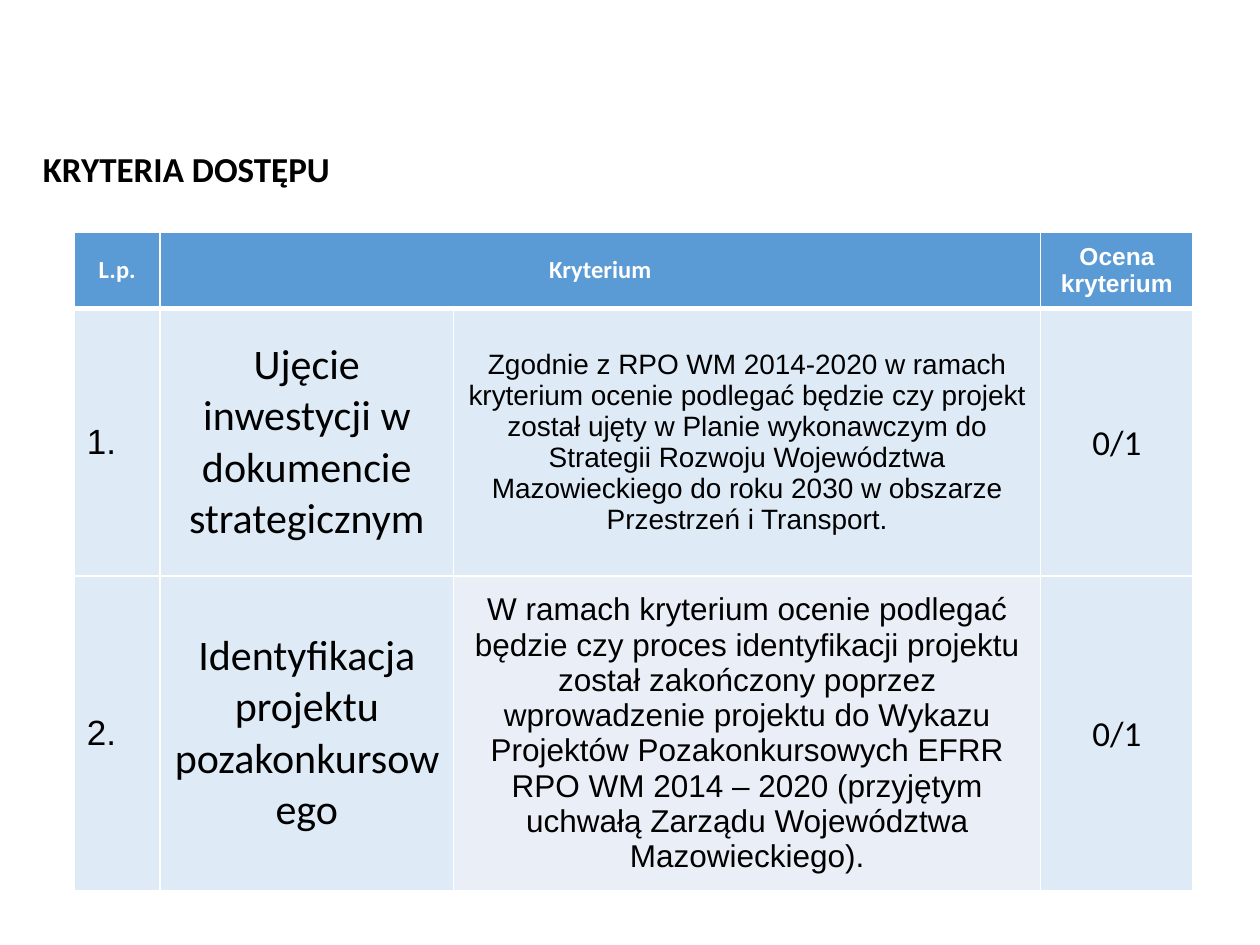
from lxml import etree
from pptx import Presentation
from pptx.dml.color import RGBColor
from pptx.enum.text import MSO_ANCHOR, MSO_AUTO_SIZE, PP_ALIGN
from pptx.oxml.ns import qn
from pptx.util import Inches, Pt

WHITE = RGBColor(0xFF, 0xFF, 0xFF)
BLACK = RGBColor(0, 0, 0)
HEADER_BLUE = RGBColor(0x5B, 0x9B, 0xD5)
ROW_BLUE = RGBColor(0xDE, 0xEB, 0xF7)
PALE_BLUE = RGBColor(0xEA, 0xEF, 0xF7)


def format_text(paragraph, font_name, size, color, bold, alignment):
    paragraph.alignment = alignment
    for run in paragraph.runs:
        run.font.name = font_name
        run.font.size = Pt(size)
        run.font.color.rgb = color
        run.font.bold = bold


def add_border(cell, side, width):
    line = etree.SubElement(cell._tc.get_or_add_tcPr(), qn(f"a:{side}"), w=str(Pt(width)))
    fill = etree.SubElement(line, qn("a:solidFill"))
    etree.SubElement(fill, qn("a:srgbClr"), val=str(WHITE))


presentation = Presentation()
presentation.slide_width = Inches(10)
presentation.slide_height = Inches(7.5)
slide = presentation.slides.add_slide(presentation.slide_layouts[5])

# Title
title = slide.shapes.title
title.left, title.top = Inches(0.24), Inches(1.12)
title.width, title.height = Inches(8.84), Inches(0.44)
title.text_frame.text = "KRYTERIA DOSTĘPU"
title.text_frame.word_wrap = True
title.text_frame.auto_size = MSO_AUTO_SIZE.SHAPE_TO_FIT_TEXT
title.text_frame.vertical_anchor = MSO_ANCHOR.MIDDLE
format_text(title.text_frame.paragraphs[0], "Calibri", 20, BLACK, True, PP_ALIGN.LEFT)

# Criteria: text, font and size of each cell
rows = [
    [("L.p.", "Calibri", 14), ("Kryterium", "Calibri", 14), ("", "Calibri", 14),
     ("Ocena kryterium", "Arial", 14)],
    [("1.", "Arial", 20),
     ("Ujęcie inwestycji w dokumencie strategicznym", "Calibri", 24),
     ("Zgodnie z RPO WM 2014-2020 w ramach kryterium ocenie podlegać będzie czy projekt "
      "został ujęty w Planie wykonawczym do Strategii Rozwoju Województwa Mazowieckiego "
      "do roku 2030 w obszarze Przestrzeń i Transport.", "Arial", 16),
     ("0/1", "Calibri", 20)],
    [("2.", "Arial", 20),
     ("Identyfikacja projektu pozakonkursowego", "Calibri", 24),
     ("W ramach kryterium ocenie podlegać będzie czy proces identyfikacji projektu "
      "został zakończony poprzez wprowadzenie projektu do Wykazu Projektów "
      "Pozakonkursowych EFRR RPO WM 2014 – 2020 (przyjętym uchwałą Zarządu "
      "Województwa Mazowieckiego).", "Arial", 18),
     ("0/1", "Calibri", 20)],
]
column_widths = [0.68, 2.33, 4.66, 1.21]
row_heights = [0.61, 2.12, 2.17]

# Table
table = slide.shapes.add_table(
    len(rows), len(column_widths), Inches(0.59), Inches(1.84),
    Inches(sum(column_widths)), Inches(sum(row_heights))).table
for column, width in zip(table.columns, column_widths):
    column.width = Inches(width)
for row, height in zip(table.rows, row_heights):
    row.height = Inches(height)
table.cell(0, 1).merge(table.cell(0, 2))

for row_index, row in enumerate(rows):
    is_header = row_index == 0
    for column_index, (text, font_name, size) in enumerate(row):
        cell = table.cell(row_index, column_index)
        add_border(cell, "lnL", 1)
        add_border(cell, "lnR", 1)
        add_border(cell, "lnT", 3 if row_index == 1 else 1)
        add_border(cell, "lnB", 3 if is_header else 1)
        cell.fill.solid()
        cell.fill.fore_color.rgb = HEADER_BLUE if is_header else ROW_BLUE
        cell.vertical_anchor = MSO_ANCHOR.MIDDLE
        if cell.is_spanned:
            continue
        cell.text_frame.text = text
        paragraph = cell.text_frame.paragraphs[0]
        is_number = column_index == 0 and not is_header
        format_text(paragraph, font_name, size, WHITE if is_header else BLACK,
                    is_header, PP_ALIGN.LEFT if is_number else PP_ALIGN.CENTER)
        # Score cells
        if column_index == 3 and not is_header:
            paragraph.line_spacing = 1.07
            cell.margin_left = cell.margin_right = Inches(0.04)
            cell.margin_top = cell.margin_bottom = Inches(0.04)

table.cell(2, 2).fill.fore_color.rgb = PALE_BLUE

presentation.save("out.pptx")
